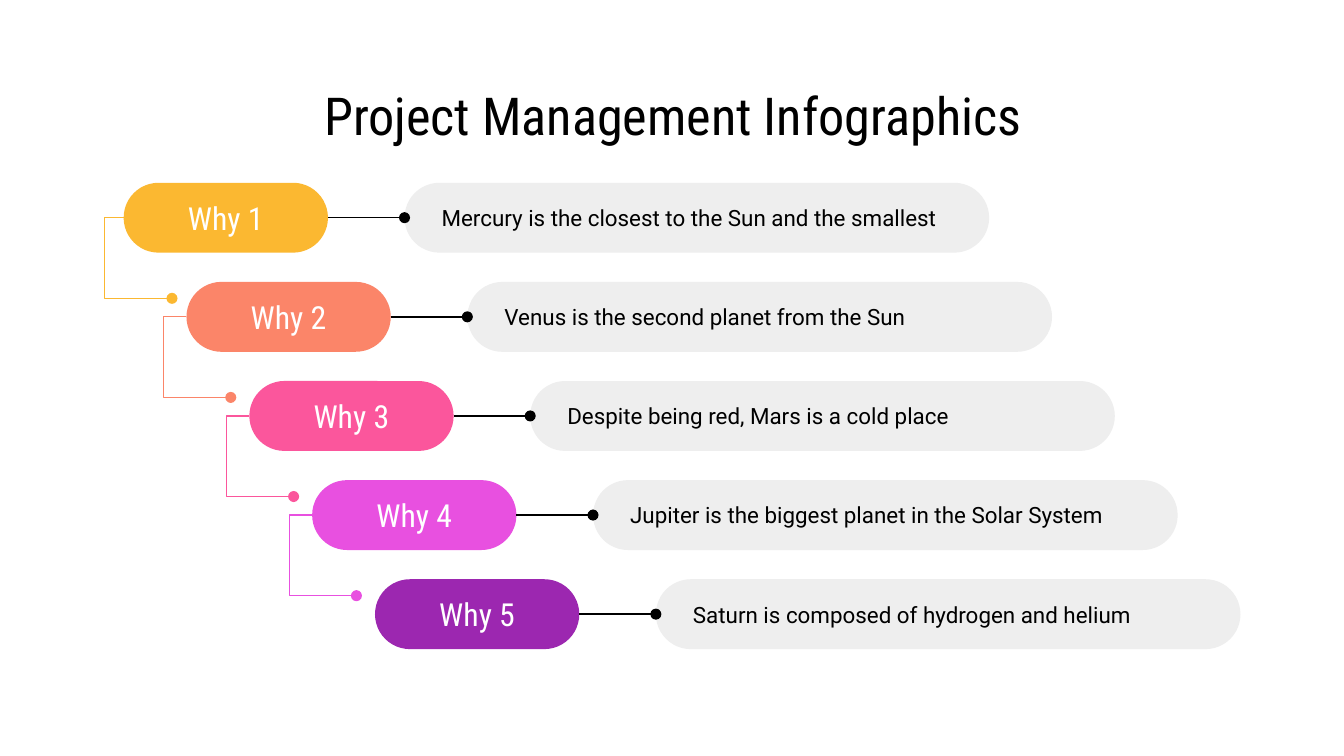
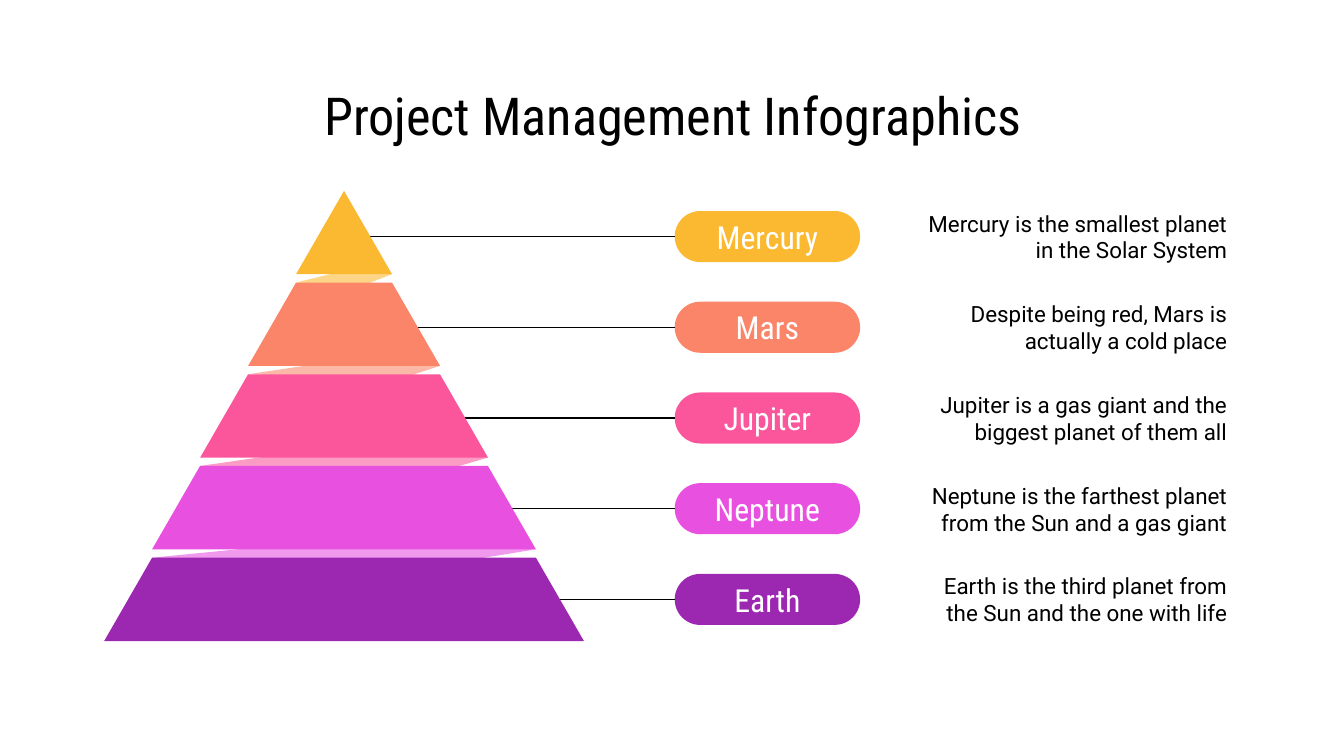
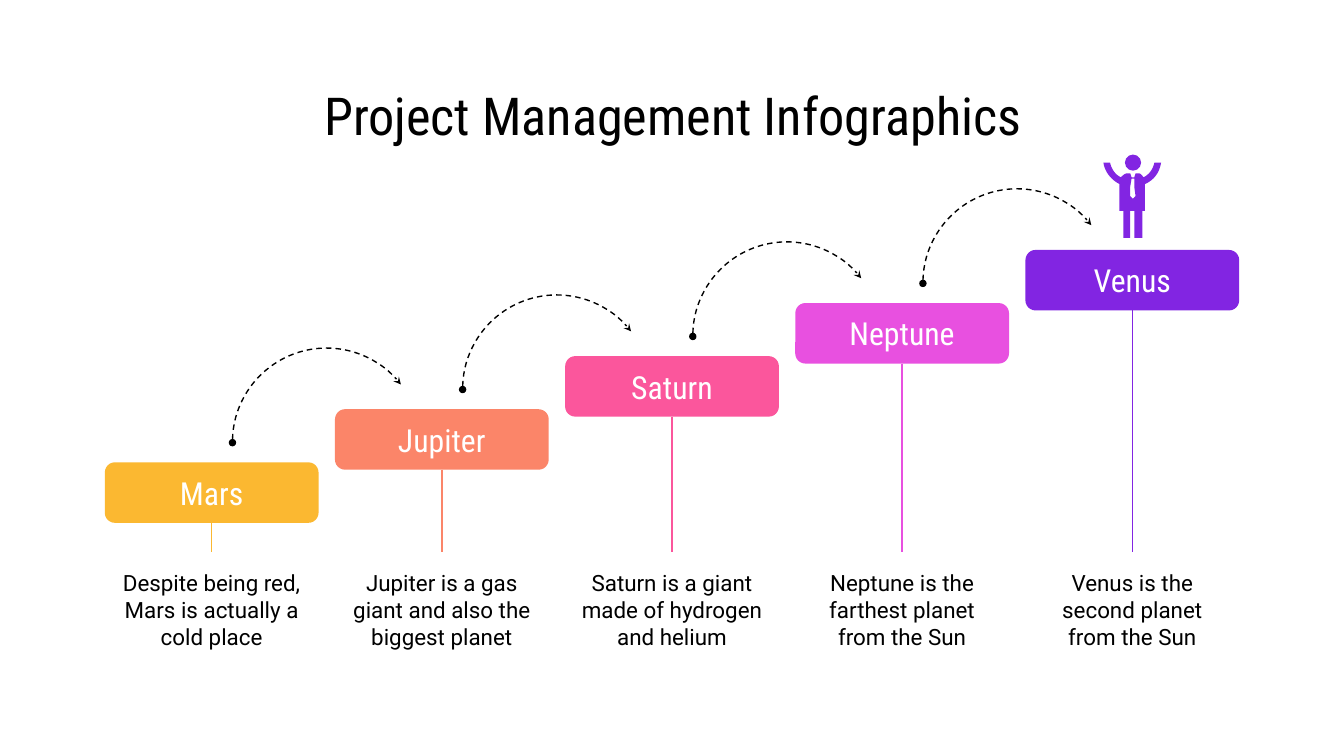
from lxml.etree import SubElement
from pptx import Presentation
from pptx.dml.color import RGBColor
from pptx.enum.dml import MSO_LINE_DASH_STYLE as DASH
from pptx.enum.shapes import MSO_CONNECTOR, MSO_SHAPE
from pptx.enum.text import MSO_ANCHOR, PP_ALIGN
from pptx.oxml.ns import qn
from pptx.util import Inches, Pt

BLACK, WHITE, GRAY = "000000", "FFFFFF", "EEEEEE"
YELLOW, CORAL, PINK, MAGENTA = "FBB831", "FB8569", "FB569C", "E850E0"
PURPLE, VIOLET = "9C27B0", "8225E2"
PALETTE = [YELLOW, CORAL, PINK, MAGENTA, PURPLE]
HEAD_FONT, BODY_FONT = "Roboto Condensed", "Roboto"
LEFT, CENTER, RIGHT = PP_ALIGN.LEFT, PP_ALIGN.CENTER, PP_ALIGN.RIGHT
MARGIN, CONTENT_W = 0.78, 8.45
TITLE = "Project Management Infographics"

WHYS = [
    "Mercury is the closest to the Sun and the smallest",
    "Venus is the second planet from the Sun",
    "Despite being red, Mars is a cold place",
    "Jupiter is the biggest planet in the Solar System",
    "Saturn is composed of hydrogen and helium",
]
TIERS = [
    ("Mercury", "Mercury is the smallest planet in the Solar System", (0.53, 0.67, 0.03)),
    ("Mars", "Despite being red, Mars is actually a cold place", (0.48, 0.78, 0.04)),
    ("Jupiter", "Jupiter is a gas giant and the biggest planet of them all", (0.43, 0.79, 0.07)),
    ("Neptune", "Neptune is the farthest planet from the Sun and a gas giant", (0.33, 0.8, 0.03)),
    ("Earth", "Earth is the third planet from the Sun and the one with life", None),
]
STEPS = [
    ("Mars", "Despite being red, Mars is actually a cold place", YELLOW),
    ("Jupiter", "Jupiter is a gas giant and also the biggest planet", CORAL),
    ("Saturn", "Saturn is a giant made of hydrogen and helium", PINK),
    ("Neptune", "Neptune is the farthest planet\vfrom the Sun", MAGENTA),
    ("Venus", "Venus is the second planet from the Sun", VIOLET),
]
TIE = [(0.23, 0.12), (0.23, 0.18), (0.24, 0.25), (0.22, 0.27), (0.2, 0.25),
       (0.2, 0.18), (0.21, 0.12)]
BODY = [(0, 0), (0.01, 0.07, 0.06, 0.13, 0.12, 0.16), (0.12, 0.36), (0.15, 0.36),
        (0.15, 0.56), (0.2, 0.56), (0.2, 0.36), (0.23, 0.36), (0.23, 0.56),
        (0.29, 0.56), (0.29, 0.36), (0.31, 0.36), (0.31, 0.16),
        (0.38, 0.13, 0.42, 0.07, 0.43, 0), (0.38, 0),
        (0.37, 0.05, 0.34, 0.09, 0.3, 0.11), (0.29, 0.1, 0.28, 0.08, 0.26, 0.08),
        (0.24, 0.08), (0.23, 0.11), (0.21, 0.11), (0.2, 0.08), (0.18, 0.08),
        (0.16, 0.08, 0.14, 0.1, 0.13, 0.11), (0.09, 0.09, 0.06, 0.05, 0.05, 0)]


def rgb(value):
    """Turn a hex string into a colour."""
    return RGBColor.from_string(value)


def write(sp, text, size=12, font=BODY_FONT, color=BLACK, align=LEFT, inset=0.1):
    """Fill a shape with one formatted paragraph."""
    tf = sp.text_frame
    tf.word_wrap = True
    tf.vertical_anchor = MSO_ANCHOR.MIDDLE
    tf.margin_left = Inches(inset)
    tf.margin_top = tf.margin_right = tf.margin_bottom = Inches(0.1)
    p = tf.paragraphs[0]
    p.text = text
    p.alignment = align
    for r in p.runs:
        r.font.size, r.font.name = Pt(size), font
        r.font.color.rgb = rgb(color)


def add_text(s, x, y, w, h, text, **style):
    """Add a text box."""
    write(s.shapes.add_textbox(Inches(x), Inches(y), Inches(w), Inches(h)), text, **style)


def paint(sp, fill=None, alpha=None):
    """Give a shape a plain fill with no line or shadow."""
    sp.shadow.inherit = False
    sp.line.fill.background()
    if fill is None:
        sp.fill.background()
        return
    sp.fill.solid()
    sp.fill.fore_color.rgb = rgb(fill)
    if alpha:
        color = sp.element.spPr.find(qn("a:solidFill"))[0]
        SubElement(color, qn("a:alpha"), val=str(alpha * 1000))


def stroke(sp, color=BLACK, dash=None, head=None, tail=None, mark_size="med"):
    """Set a thin line with optional end marks."""
    sp.line.color.rgb = rgb(color)
    sp.line.width = Pt(0.75)
    if dash:
        sp.line.dash_style = dash
    ln = sp.element.spPr.find(qn("a:ln"))
    for tag, mark in (("a:headEnd", head), ("a:tailEnd", tail)):
        if mark:
            SubElement(ln, qn(tag), type=mark, w=mark_size, len=mark_size)


def add_preset(s, kind, x, y, w, h, fill=None, adjust=()):
    """Add a preset shape."""
    sp = s.shapes.add_shape(kind, Inches(x), Inches(y), Inches(w), Inches(h))
    for i, value in enumerate(adjust):
        sp.adjustments[i] = value
    paint(sp, fill)
    return sp


def add_label(s, x, y, w, h, text, fill, radius=0.5):
    """Add a rounded box with a white heading."""
    sp = add_preset(s, MSO_SHAPE.ROUNDED_RECTANGLE, x, y, w, h, fill, [radius])
    write(sp, text, size=17, font=HEAD_FONT, color=WHITE, align=CENTER)
    return sp


def add_line(s, start, side, x, y, color=BLACK, end=None, tail=None):
    """Run a connector from a shape's side to a point or to another shape's left."""
    c = s.shapes.add_connector(MSO_CONNECTOR.STRAIGHT, 0, 0, Inches(x), Inches(y))
    c.begin_connect(start, side)
    if end is not None:
        c.end_connect(end, 1)
    stroke(c, color, tail=tail)
    SubElement(c.element.spPr, qn("a:effectLst"))


def flatten(points, x, y):
    """Shift points to a corner and turn curves into short straight steps."""
    result = []
    for point in points:
        if len(point) == 2:
            result.append(point)
            continue
        a, b, c, d = result[-1], point[:2], point[2:4], point[4:]
        for t in (k / 8 for k in range(1, 9)):
            u = 1 - t
            result.append(tuple(u**3 * a[i] + 3 * u * u * t * b[i] + 3 * u * t * t * c[i]
                                + t**3 * d[i] for i in (0, 1)))
    return [(Inches(x + px), Inches(y + py)) for px, py in result]


def add_outline(s, *contours, x=0, y=0, fill=None, alpha=None, close=True):
    """Add a freeform made of one or more contours."""
    first, *others = [flatten(c, x, y) for c in contours]
    builder = s.shapes.build_freeform(*first[0])
    builder.add_line_segments(first[1:], close=close)
    for contour in others:
        builder.move_to(*contour[0])
        builder.add_line_segments(contour[1:], close=close)
    sp = builder.convert_to_shape()
    paint(sp, fill, alpha)
    return sp


def add_slide(prs):
    """Add a blank slide with the shared title."""
    s = prs.slides.add_slide(prs.slide_layouts[6])
    s.background.fill.solid()
    s.background.fill.fore_color.rgb = rgb(WHITE)
    add_text(s, MARGIN, 0.59, CONTENT_W, 0.53, TITLE, size=28, font=HEAD_FONT, align=CENTER)
    return s


def add_why(s, x, y, number, text, color, last):
    """Add one question, its answer bar and the elbow to the next question."""
    w, h = 1.52, 0.52
    mid = y + h / 2
    if not last:
        back = max(MARGIN, x - 0.17)
        elbow = add_outline(s, [(back + 0.17, mid), (back, mid), (back, mid + 0.6),
                                (back + 0.5, mid + 0.6)], close=False)
        stroke(elbow, color, tail="oval")
    pill = add_label(s, x, y, w, h, f"Why {number}", color)
    bar = add_preset(s, MSO_SHAPE.ROUNDED_RECTANGLE, x + 2.09, y, 4.35, h, GRAY, [0.5])
    write(bar, text, inset=0.2)
    add_line(s, pill, 3, x + 2.09, mid, end=bar, tail="oval")


def why_slide(prs):
    """Build the cascade of five questions."""
    s = add_slide(prs)
    for i, (text, color) in enumerate(zip(WHYS, PALETTE)):
        add_why(s, 0.92 + 1.87 * i / 4, 1.36 + 2.95 * i / 4, i + 1, text, color,
                i == len(WHYS) - 1)


def add_tier(s, apex, top, level, fold, color):
    """Add one pyramid level and the fold that leads to the next."""
    half, h, pitch = 1.785 / 5, 0.62, 2.73 / 4
    y = top + pitch * level
    inner, outer = half * level, half * (level + 1)
    left, right, bottom = apex - outer, apex + outer, y + h
    if fold:
        start, end, overlap = fold
        add_outline(s, [(left + 2 * outer * start, bottom - overlap), (left, y + pitch),
                        (left + 2 * outer * end, y + pitch + overlap), (right, bottom)],
                    fill=color, alpha=58)
    peak = [(apex - inner, y), (left, bottom), (right, bottom)]
    add_outline(s, peak + [(apex + inner, y)] if level else peak, fill=color)


def pyramid_slide(prs):
    """Build the pyramid with a label and description for each level."""
    s = add_slide(prs)
    for i, ((name, text, fold), color) in enumerate(zip(TIERS, PALETTE)):
        y = 1.57 + 2.7 * i / 4
        pill = add_label(s, 5.02, y, 1.38, 0.38, name, color)
        add_line(s, pill, 1, 2.68 + 1.3 * i / 4, y + 0.19)
        add_tier(s, 2.56, 1.42, i, fold, color)
        add_text(s, 6.75, y - 0.1, 2.48, 0.58, text, align=RIGHT)


def add_step(s, x, y, name, text, color, last):
    """Add one stair card with its stem, caption and arrow to the next."""
    w, h, caption_y = 1.59, 0.45, 4.19
    if not last:
        arc = add_preset(s, MSO_SHAPE.ARC, x + 0.95, y - 0.85, 1.4, 1.4,
                         adjust=[107.804, 193.313])
        stroke(arc, dash=DASH.DASH, head="oval", tail="stealth", mark_size="sm")
    card = add_label(s, x, y, w, h, name, color, radius=0.167)
    add_line(s, card, 2, x + w / 2, caption_y - 0.08, color)
    add_text(s, x, caption_y, w, 0.69, text, align=CENTER)


def add_person(s, x, y, color):
    """Add the cheering figure."""
    add_preset(s, MSO_SHAPE.OVAL, x + 0.16, y, 0.12, 0.12, color)
    add_outline(s, TIE, BODY, x=x, y=y + 0.06, fill=color)


def stairs_slide(prs):
    """Build the five rising steps."""
    s = add_slide(prs)
    for i, step in enumerate(STEPS):
        add_step(s, MARGIN + 6.85 * i / 4, 3.44 - 1.58 * i / 4, *step, i == len(STEPS) - 1)
    add_person(s, 8.21, 1.15, VIOLET)


def main():
    """Build and save the deck."""
    prs = Presentation()
    prs.slide_width = Inches(10)
    prs.slide_height = prs.slide_width * 9 // 16
    why_slide(prs)
    pyramid_slide(prs)
    stairs_slide(prs)
    prs.save("out.pptx")


if __name__ == "__main__":
    main()
